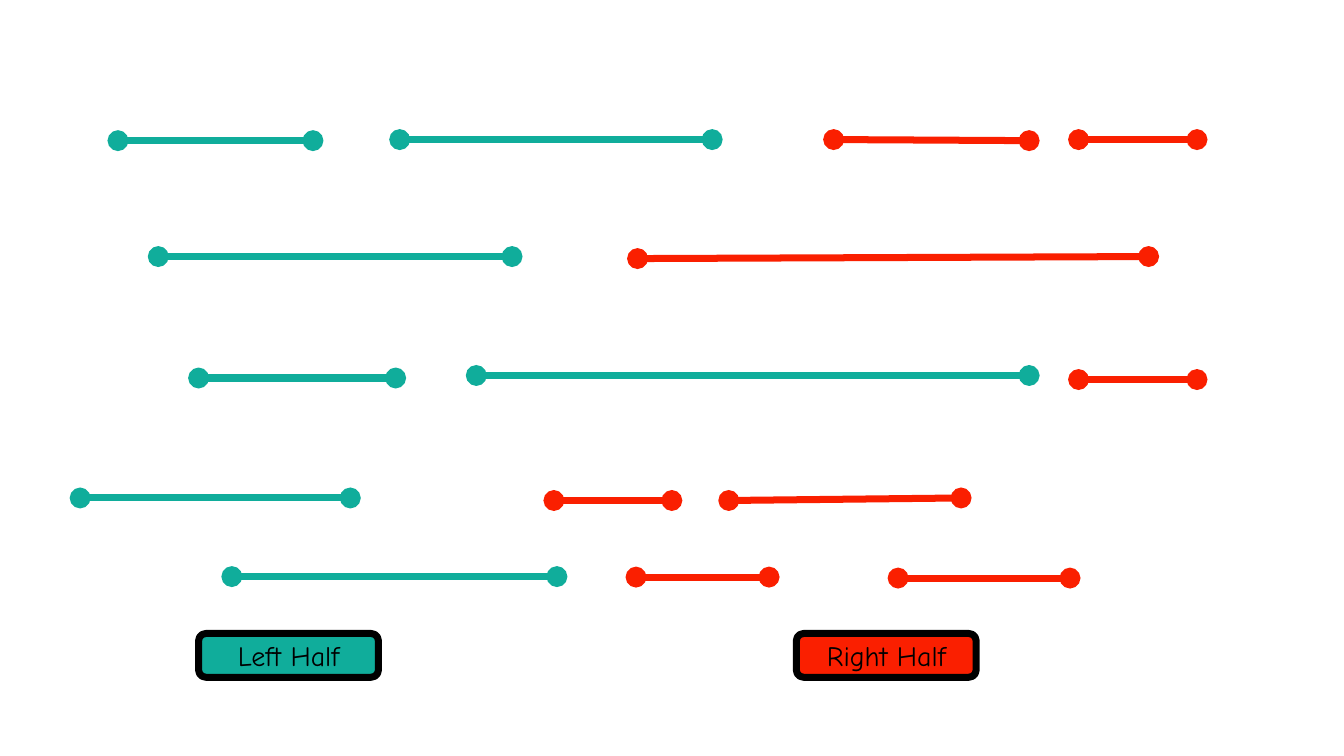
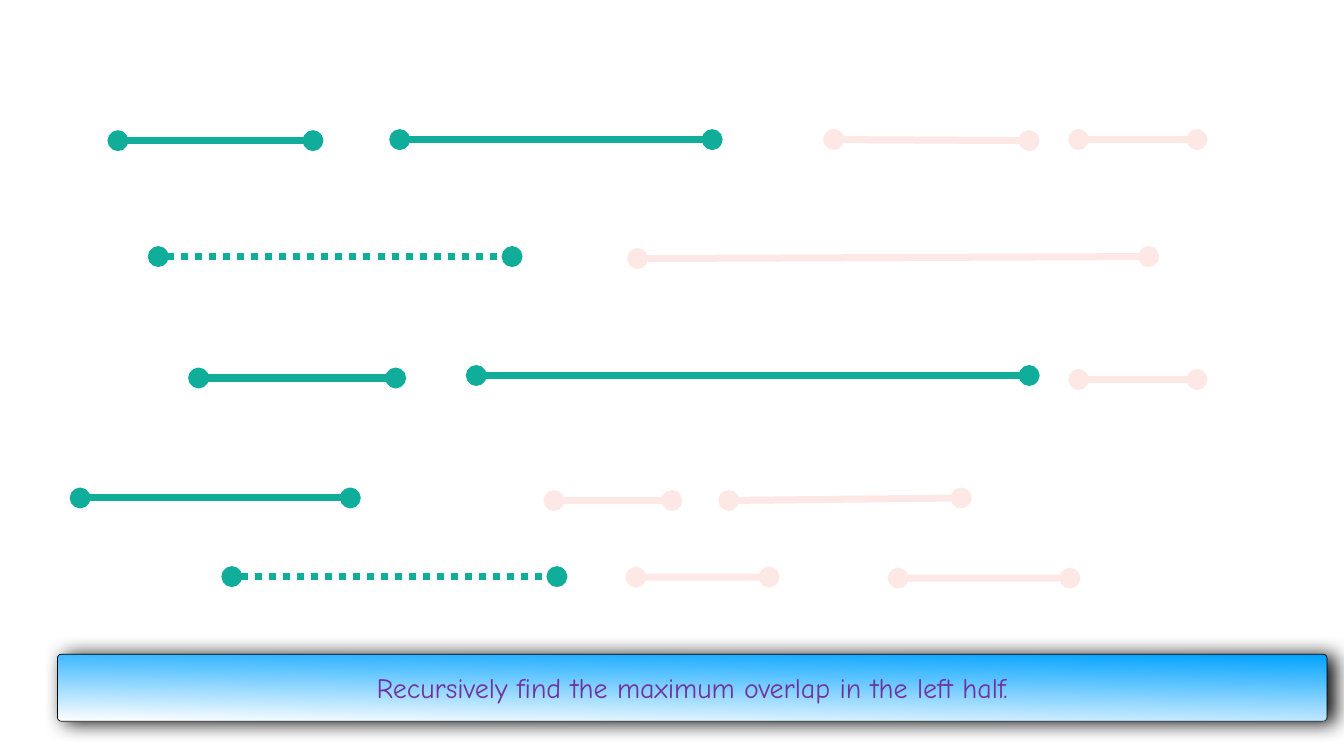
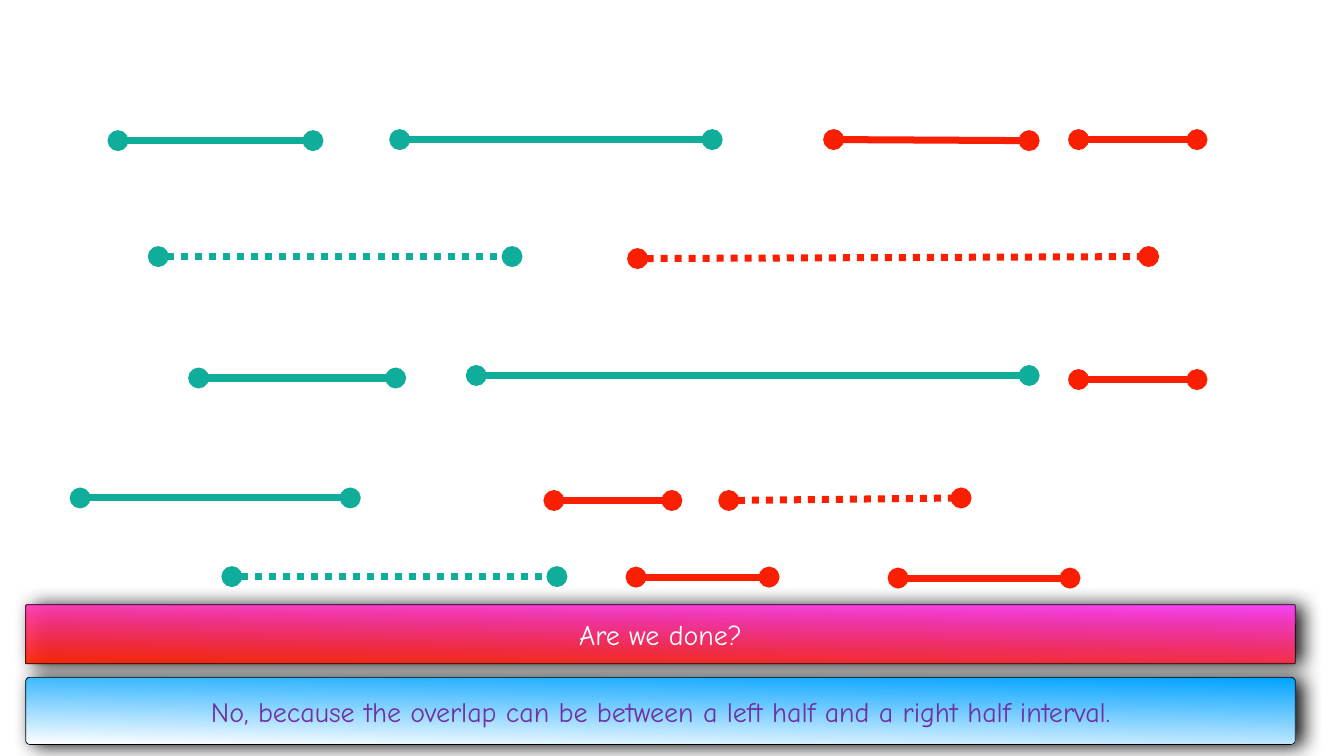
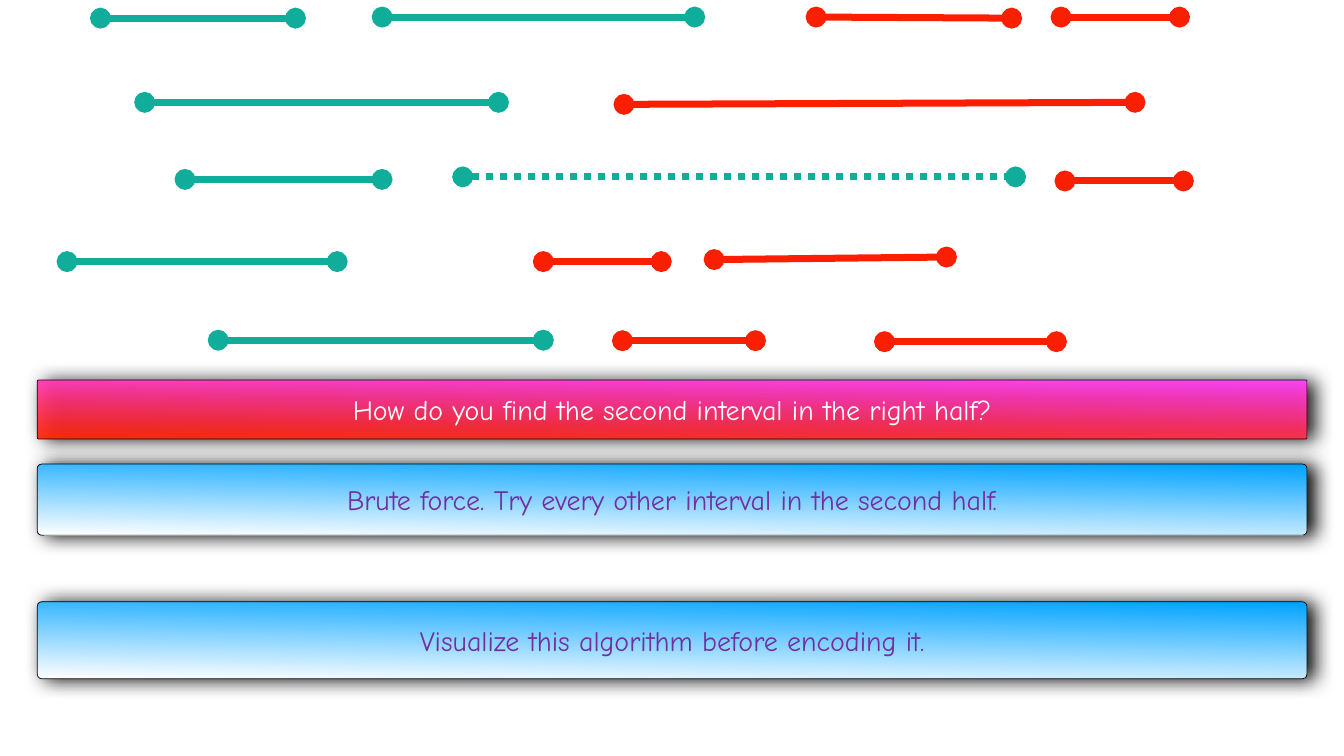
from lxml import etree
from pptx import Presentation
from pptx import util as u
from pptx.dml.color import RGBColor
from pptx.enum import dml, shapes, text
from pptx.oxml.ns import qn

COLORS = {
    "left": "10AD9B", "right": "FA1F00", "ink": "000000",
    "answer_text": "7030A0", "question_text": "FFFFFF",
    "answer_top": "00A2FF", "answer_bottom": "FFFFFF",
    "question_top": "FF40FF", "question_bottom": "FF2600",
}
FONT, FONT_SIZE = "Comic Neue", 40
BAND_WIDTH = 1813.7

INTERVALS = {
    "a1": ("left", 168.5, 200.9, 447.1, 200.9),
    "b1": ("left", 226.1, 366.5, 731.5, 366.5),
    "a2": ("left", 571, 199.4, 1017.4, 199.4),
    "c1": ("left", 283.7, 540, 565.2, 540),
    "c2": ("left", 680.4, 536.4, 1470.2, 536.4),
    "b2": ("right", 910.8, 369.4, 1640.9, 366.5),
    "a3": ("right", 1190.9, 199.4, 1470.2, 200.9),
    "d1": ("left", 114.5, 711.4, 500.4, 711.4),
    "e1": ("left", 331.2, 823.7, 795.6, 823.7),
    "d3": ("right", 1041.1, 715, 1373, 711.4),
    "e2": ("right", 908.6, 824.4, 1098.7, 824.4),
    "a4": ("right", 1540.8, 199.4, 1710, 199.4),
    "e3": ("right", 1283, 825.8, 1528.6, 825.8),
    "c3": ("right", 1540.8, 542.2, 1710, 542.2),
    "d2": ("right", 791.3, 715, 959.8, 715),
}
COMPACT = {
    "a": (-25, -175), "b": (-19.4, -220.3), "c": (-19.4, -283.7),
    "d": (-18.7, -337.7), "d2": (-15.1, -341.3), "d3": (-20.9, -344.2),
    "e": (-19.4, -337.7),
}


def rgb(name):
    return RGBColor.from_string(COLORS[name])


def set_alpha(el, percent):
    for clr in el.iter(qn("a:srgbClr")):
        etree.SubElement(clr, qn("a:alpha"), val=str(percent * 1000))


class Deck:
    def __init__(self):
        self.prs = Presentation()
        self.prs.slide_width, self.prs.slide_height = u.Pt(1920), u.Pt(1080)
        self.s = None

    def slide(self):
        self.s = self.prs.slides.add_slide(self.prs.slide_layouts[6])

    def interval(self, half, x1, y1, x2, y2, dotted=False, alpha=100):
        ends = [u.Pt(v) for v in (x1, y1, x2, y2)]
        sp = self.s.shapes.add_connector(shapes.MSO_CONNECTOR.STRAIGHT, *ends)
        sp.line.color.rgb = rgb(half)
        sp.line.width = u.Pt(10)
        if dotted:
            sp.line.dash_style = dml.MSO_LINE.ROUND_DOT
        spPr = sp._element.spPr
        ln = spPr.find(qn("a:ln"))
        if alpha < 100:
            set_alpha(ln, alpha)
        for end in ("a:headEnd", "a:tailEnd"):
            etree.SubElement(ln, qn(end), type="oval")
        etree.SubElement(spPr, qn("a:effectLst"))

    def intervals(self, dotted=(), faded=None, shifts=None):
        for name, (half, x1, y1, x2, y2) in INTERVALS.items():
            dx, dy = (0, 0)
            if shifts:
                dx, dy = shifts.get(name, shifts[name[0]])
            self.interval(half, x1 + dx, y1 + dy, x2 + dx, y2 + dy,
                          name in dotted, 10 if half == faded else 100)

    def box(self, words, x, y, w, h, line_width, color):
        sp = self.s.shapes.add_shape(shapes.MSO_SHAPE.ROUNDED_RECTANGLE,
                                     *[u.Pt(v) for v in (x, y, w, h)])
        sp.shadow.inherit = False
        sp.line.color.rgb = rgb("ink")
        sp.line.width = u.Pt(line_width)
        tf = sp.text_frame
        tf.word_wrap = True
        tf.vertical_anchor = text.MSO_ANCHOR.MIDDLE
        tf.margin_left = tf.margin_right = u.Pt(4)
        tf.margin_top = tf.margin_bottom = u.Pt(4)
        p = tf.paragraphs[0]
        p.text = words
        p.alignment = text.PP_ALIGN.CENTER
        p.font.name, p.font.size = FONT, u.Pt(FONT_SIZE)
        p.font.color.rgb = rgb(color)
        return sp

    def label(self, words, half, x):
        sp = self.box(words, x, 905, 257, 62.6, 10, "ink")
        sp.fill.solid()
        sp.fill.fore_color.rgb = rgb(half)

    def band(self, kind, words, x, y, h, radius, alpha=100):
        sp = self.box(words, x, y, BAND_WIDTH, h, 1, kind + "_text")
        sp.adjustments[0] = radius
        sp.fill.gradient()
        sp.fill.gradient_angle = 269
        for stop, side in zip(sp.fill.gradient_stops, ("_top", "_bottom")):
            stop.color.rgb = rgb(kind + side)
        spPr = sp._element.spPr
        if alpha < 100:
            set_alpha(spPr, alpha)
        shadow = etree.SubElement(
            spPr.find(qn("a:effectLst")), qn("a:outerShdw"),
            blurRad=str(u.Pt(28)), dist=str(u.Pt(9)), dir="0", rotWithShape="0")
        etree.SubElement(shadow, qn("a:srgbClr"), val=COLORS["ink"])
        set_alpha(shadow, 97)

    def question(self, words, x, y):
        self.band("question", words, x, y, 84.2, 0.017, 93)

    def answer(self, words, x, y, h=95.8):
        self.band("answer", words, x, y, h, 0.059)


def main():
    deck = Deck()

    deck.slide()
    deck.intervals()
    deck.label("Left Half", "left", 283.7)
    deck.label("Right Half", "right", 1137.6)

    deck.slide()
    deck.intervals(dotted=("b1", "e1"), faded="right")
    deck.answer("Recursively find the maximum overlap in the left half.", 82, 934.6)

    deck.slide()
    deck.intervals(dotted=("b1", "e1", "b2", "d3"))
    deck.question("Are we done?", 36.7, 864)
    deck.answer("No, because the overlap can be between a left half and a right half interval.",
                36.7, 967.7)

    deck.slide()
    deck.intervals(dotted=("c2",), shifts=COMPACT)
    deck.question("How do you find the second interval in the right half?", 53.3, 542.9)
    deck.answer("Brute force. Try every other interval in the second half.", 53.3, 663, 101.5)
    deck.answer("Visualize this algorithm before encoding it.", 53.3, 859.7, 110)

    deck.prs.save("out.pptx")


if __name__ == "__main__":
    main()
